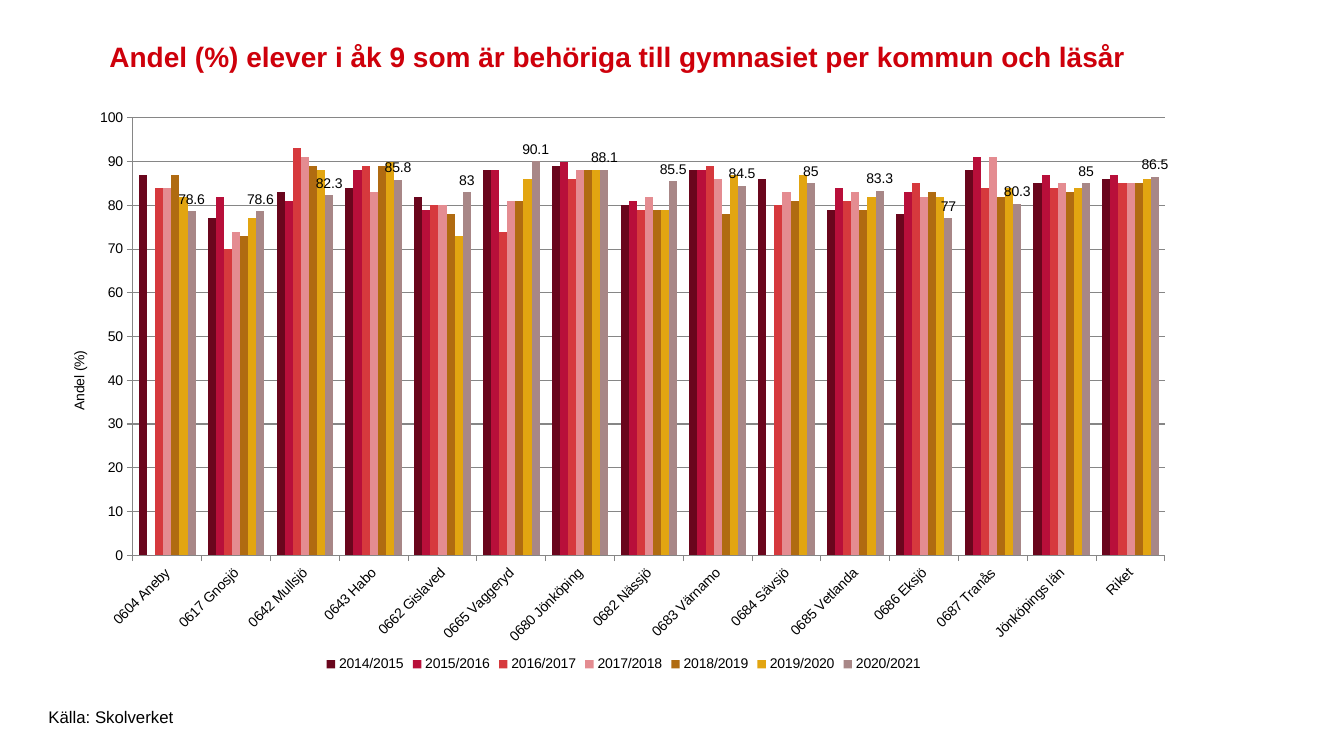
from lxml import etree
from pptx import Presentation
from pptx import util as u
from pptx.chart.data import CategoryChartData
from pptx.dml.color import RGBColor
from pptx.enum import chart as ch, text
from pptx.oxml import ns

FONT = "Arial"


def style(font, size, color="000000", bold=False):
    font.name, font.size, font.bold = FONT, u.Pt(size), bold
    font.color.rgb = RGBColor.from_string(color)


def set_layout(parent, position, **values):
    for old in parent.findall(ns.qn("c:layout")):
        parent.remove(old)
    layout = etree.Element(ns.qn("c:layout"))
    manual = etree.SubElement(layout, ns.qn("c:manualLayout"))
    for tag, value in values.items():
        etree.SubElement(manual, ns.qn("c:" + tag)).set("val", str(value))
    parent.insert(position, layout)


presentation = Presentation()
presentation.slide_width, presentation.slide_height = u.Pt(960), u.Pt(540)
slide = presentation.slides.add_slide(presentation.slide_layouts[6])

municipalities = [
    "0604 Aneby", "0617 Gnosjö", "0642 Mullsjö", "0643 Habo", "0662 Gislaved",
    "0665 Vaggeryd", "0680 Jönköping", "0682 Nässjö", "0683 Värnamo", "0684 Sävsjö",
    "0685 Vetlanda", "0686 Eksjö", "0687 Tranås", "Jönköpings län", "Riket",
]
school_years = [
    ("2014/2015", "6A061D", [87, 77, 83, 84, 82, 88, 89, 80, 88, 86, 79, 78, 88, 85, 86]),
    ("2015/2016", "B80F3A", [0, 82, 81, 88, 79, 88, 90, 81, 88, 0, 84, 83, 91, 87, 87]),
    ("2016/2017", "D6393D", [84, 70, 93, 89, 80, 74, 86, 79, 89, 80, 81, 85, 84, 84, 85]),
    ("2017/2018", "E48C91", [84, 74, 91, 83, 80, 81, 88, 82, 86, 83, 83, 82, 91, 85, 85]),
    ("2018/2019", "B06B11", [87, 73, 89, 89, 78, 81, 88, 79, 78, 81, 79, 83, 82, 83, 85]),
    ("2019/2020", "E2A511", [82, 77, 88, 90, 73, 86, 88, 79, 87, 87, 82, 82, 84, 84, 86]),
    ("2020/2021", "A88787", [78.6, 78.6, 82.3, 85.8, 83, 90.1, 88.1, 85.5, 84.5, 85,
                             83.3, 77, 80.3, 85, 86.5]),
]

chart_data = CategoryChartData()
chart_data.categories = municipalities
for year, color, shares in school_years:
    chart_data.add_series(year, shares)
chart = slide.shapes.add_chart(
    ch.XL_CHART_TYPE.COLUMN_CLUSTERED,
    u.Pt(35), u.Pt(68), u.Pt(821), u.Pt(415), chart_data).chart
style(chart.font, 10)
chart.has_title = False
chart.has_legend = True
chart.legend.position = ch.XL_LEGEND_POSITION.BOTTOM
chart.legend.include_in_layout = False

plot = chart.plots[0]
plot.gap_width = 150
plot.overlap = 0
plot.vary_by_categories = False
for series, (year, color, shares) in zip(plot.series, school_years):
    series.format.fill.solid()
    series.format.fill.fore_color.rgb = RGBColor.from_string(color)
    series.invert_if_negative = False

labels = plot.series[-1].data_labels
labels.show_value = True
labels.position = ch.XL_LABEL_POSITION.OUTSIDE_END
style(labels.font, 10)

value_axis, category_axis = chart.value_axis, chart.category_axis
value_axis.minimum_scale, value_axis.maximum_scale, value_axis.major_unit = 0, 100, 10
value_axis.has_major_gridlines = True
value_axis.tick_labels.number_format = "0"
value_axis.tick_labels.number_format_is_linked = False
for axis in (value_axis, category_axis):
    axis.major_tick_mark = ch.XL_TICK_MARK.OUTSIDE
    style(axis.tick_labels.font, 10)
for line in (value_axis.format.line, category_axis.format.line,
             value_axis.major_gridlines.format.line):
    line.width = u.Pt(0.75)
    line.color.rgb = RGBColor.from_string("868686")
category_axis._element.find(ns.qn("c:txPr")).find(ns.qn("a:bodyPr")).set("rot", "-2700000")

axis_title = value_axis.axis_title
axis_title.text_frame.text = "Andel (%)"
style(axis_title.text_frame.paragraphs[0].font, 10)
set_layout(axis_title._element, 1, xMode="edge", yMode="edge", x=0.016, y=0.435)
set_layout(chart._chartSpace.chart.plotArea, 0, layoutTarget="inner", xMode="edge",
           yMode="edge", x=0.073, y=0.039, w=0.898, h=0.753)

captions = [
    ("Andel (%) elever i åk 9 som är behöriga till gymnasiet per kommun och läsår",
     (71, 25, 749, 30), 20, "CE000B", True, text.MSO_ANCHOR.MIDDLE),
    ("Källa: Skolverket", (27.5, 501, 162, 22), 12, "000000", False, text.MSO_ANCHOR.TOP),
]
for wording, box, size, color, bold, anchor in captions:
    frame = slide.shapes.add_textbox(*map(u.Pt, box)).text_frame
    frame.word_wrap = True
    frame.vertical_anchor = anchor
    paragraph = frame.paragraphs[0]
    paragraph.text = wording
    style(paragraph.font, size, color, bold)

presentation.save("out.pptx")
